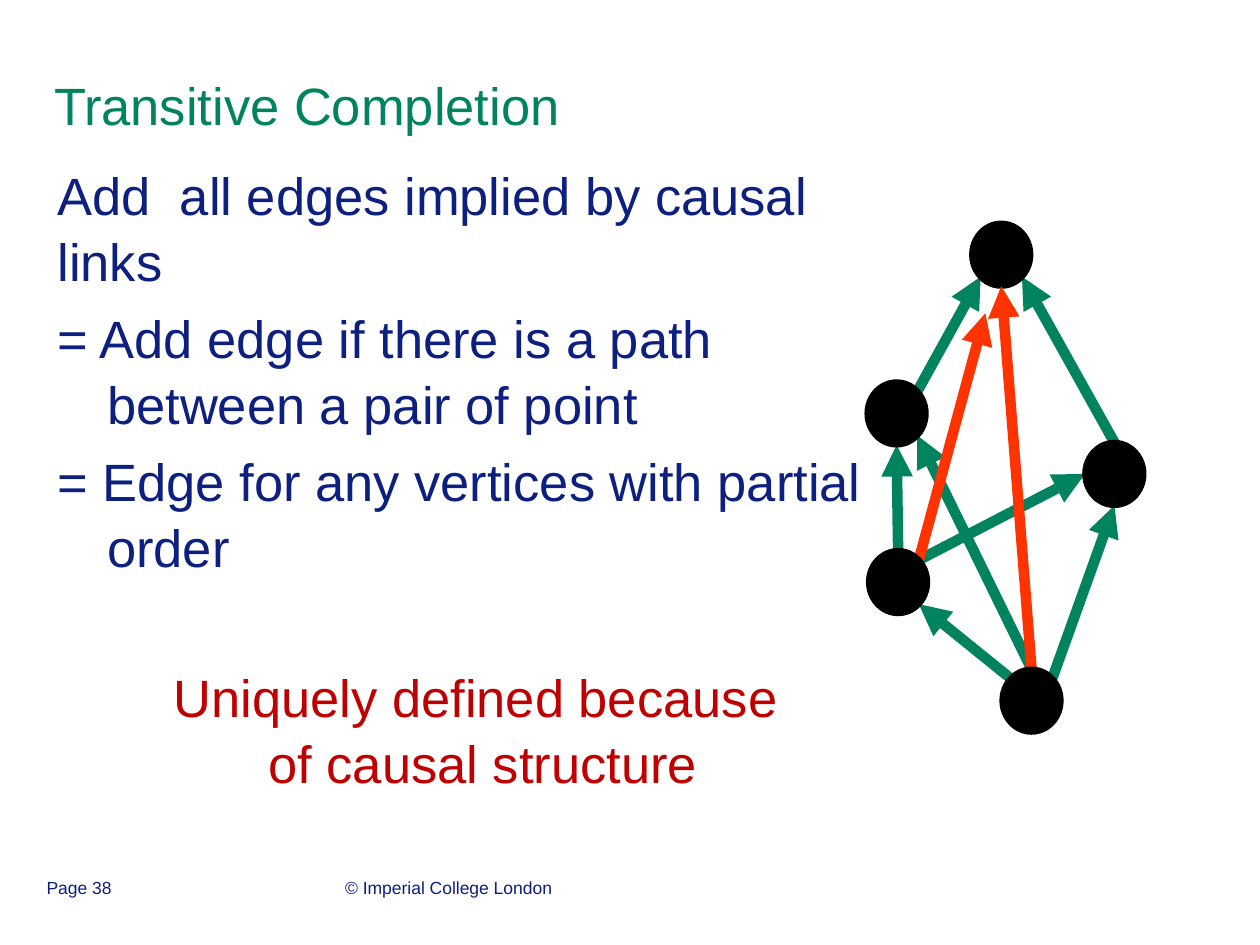
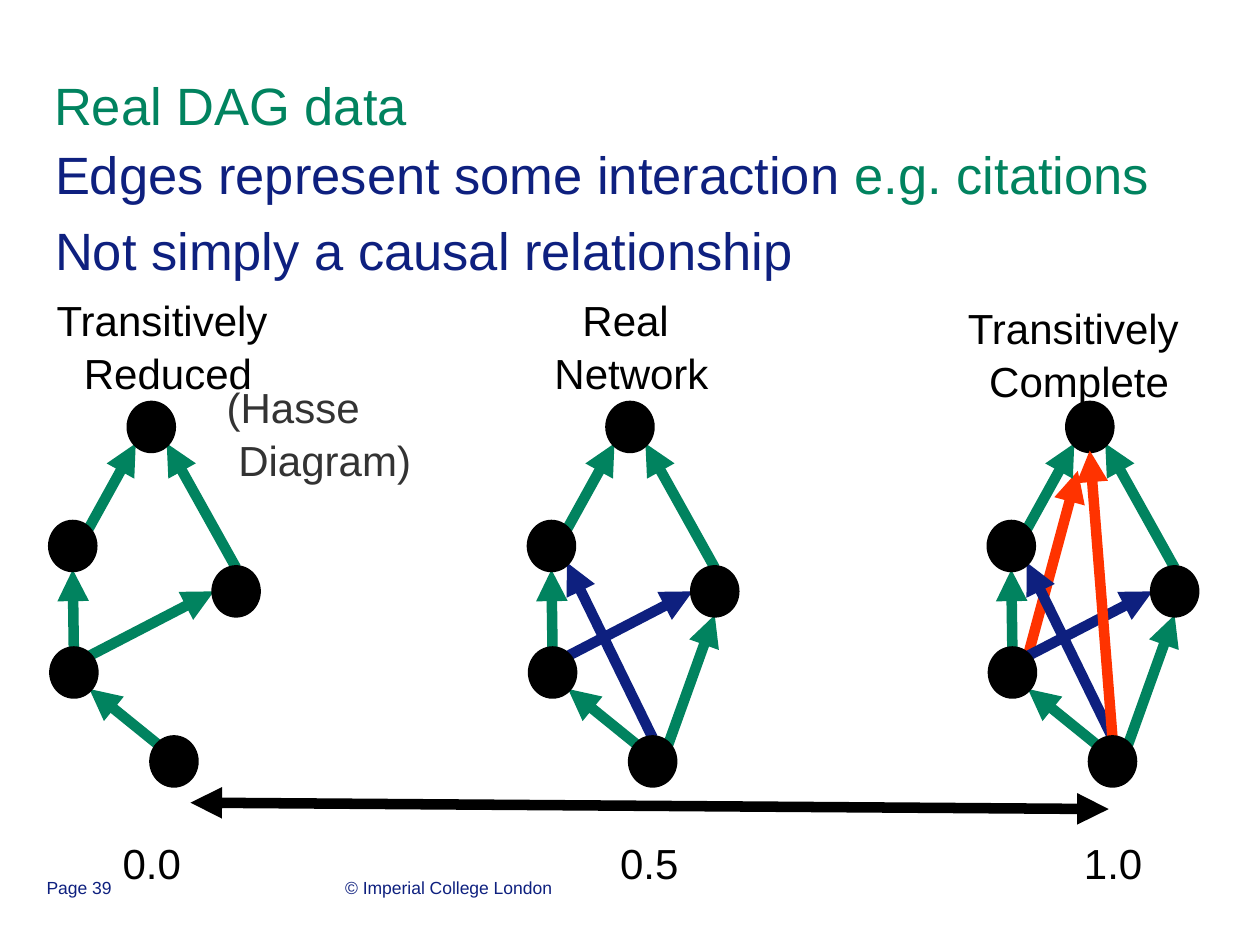
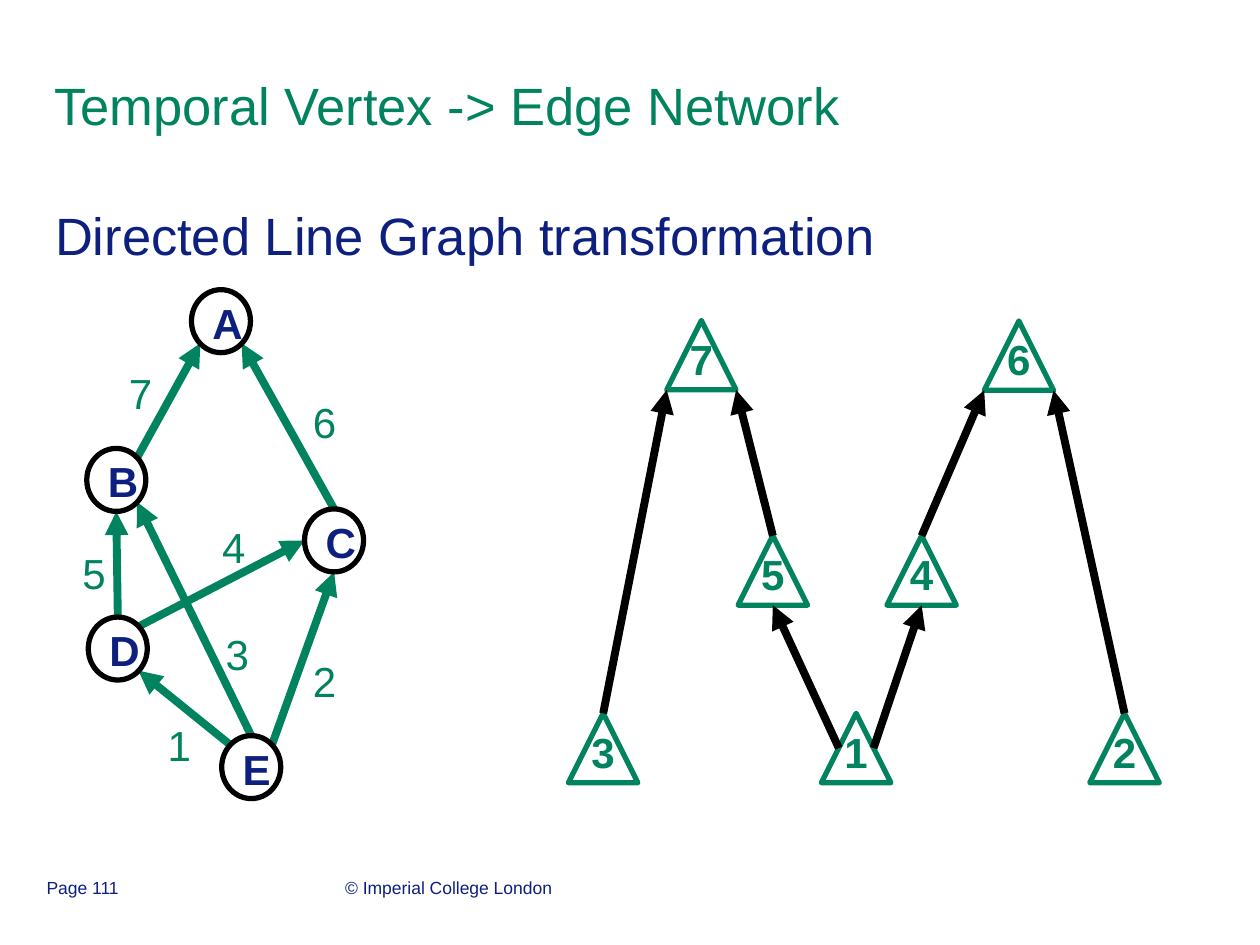
from lxml.etree import SubElement
from pptx import Presentation
from pptx.dml.color import RGBColor
from pptx.enum.shapes import MSO_CONNECTOR, MSO_SHAPE
from pptx.enum.text import MSO_ANCHOR, PP_ALIGN
from pptx.oxml.ns import qn
from pptx.util import Cm, Pt

GREEN, NAVY, RED = "01835F", "0E207F", "C00000"
ORANGE, BLACK, GREY = "FF3300", "000000", "333333"
LEFT, CENTER = PP_ALIGN.LEFT, PP_ALIGN.CENTER
rgb = RGBColor.from_string


def write(sp, paras, size=24, align=LEFT, anchor=MSO_ANCHOR.TOP, wrap=False, bold=False):
    tf = sp.text_frame
    tf.word_wrap = wrap
    tf.vertical_anchor = anchor
    for i, runs in enumerate(paras):
        p = tf.add_paragraph() if i else tf.paragraphs[0]
        p.alignment = align
        p.line_spacing = 1.05
        p.space_before = Pt(size * 0.2 if i else 0)
        for text, color in runs:
            for j, line in enumerate(text.split("\n")):
                if j:
                    p.add_line_break()
                r = p.add_run()
                r.text = line
                r.font.name = "Arial"
                r.font.size = Pt(size)
                r.font.bold = bold
                r.font.color.rgb = rgb(color)
    return tf


def arrow(shapes, start, end, color, width, ends=("a:tailEnd",)):
    cx = shapes.add_connector(MSO_CONNECTOR.STRAIGHT, *map(Cm, start + end))
    cx.line.color.rgb = rgb(color)
    cx.line.width = Pt(width)
    for tag in ends:
        SubElement(cx.line._get_or_add_ln(), qn(tag), type="triangle")
    SubElement(cx._element.spPr, qn("a:effectLst"))


prs = Presentation()
prs.slide_width, prs.slide_height = Cm(25.4), Cm(19.05)

pages = [
    ("Transitive Completion", "Page 38", (0.91, 3.1, 17.65, 14.63), [
        [("Add  all edges implied by causal links", NAVY)],
        [("= Add edge if there is a path between a pair of point", NAVY)],
        [("= Edge for any vertices with partial order", NAVY)],
        [("Uniquely defined because \nof causal structure", RED)],
    ]),
    ("Real DAG data", "Page 39", (0.86, 2.67, 23.27, 3.35), [
        [("Edges represent some interaction ", NAVY), ("e.g. citations", GREEN)],
        [("Not simply a causal relationship", NAVY)],
    ]),
    ("Temporal Vertex -> Edge Network", "Page 111", (0.86, 3.91, 21.54, 1.68), [
        [("Directed Line Graph transformation", NAVY)],
    ]),
]
bodies = []
for title, page, box, paras in pages:
    s = prs.slides.add_slide(prs.slide_layouts[6])
    sp = s.shapes.add_textbox(*map(Cm, (0.84, 0.48, 21.59, 3.18)))
    write(sp, [[(title, GREEN)]], 30, anchor=MSO_ANCHOR.MIDDLE, wrap=True)
    sp = s.shapes.add_textbox(*map(Cm, box))
    bodies.append(write(sp, paras, 30, wrap=True))
    for x, w, text in [(6.71, 8.05, "© Imperial College London"), (0.69, 5.92, page)]:
        sp = s.shapes.add_textbox(*map(Cm, (x, 17.53, w, 1.32)))
        write(sp, [[(text, NAVY)]], 10, wrap=True)
completion, real_data, line_graph = prs.slides

for p in bodies[0].paragraphs[1:3]:
    pPr = p._p.get_or_add_pPr()
    pPr.set("marL", str(Cm(1)))
    pPr.set("indent", str(-Cm(1)))
p = bodies[0].paragraphs[3]
p.alignment = CENTER
p.space_before = Pt(48)

vertices = {"A": (2.11, 0), "B": (0, 3.2), "C": (4.39, 4.42), "D": (0.03, 6.6), "E": (2.72, 8.99)}
sites = {
    "top": (0.5, 0), "bottom": (0.5, 1), "left": (0, 0.5),
    "nw": (0.15, 0.15), "ne": (0.85, 0.15), "sw": (0.15, 0.85), "se": (0.85, 0.85),
    "below": (0.23, 1.43),
}
edges = {
    "BA": ("ne", "sw"), "DB": ("top", "bottom"), "ED": ("nw", "se"), "EC": ("ne", "bottom"),
    "CA": ("top", "se"), "DC": ("ne", "left"), "EB": ("top", "se"),
    "EA": ("top", "bottom"), "DA": ("ne", "below"),
}
graphs = [
    (completion, 17.48, 4.5, 1, 6, "", "EB BA DB ED EC CA DC A C B EA DA D E"),
    (real_data, 10.67, 8.13, 0.75, 6, "EB DC", "EB BA DB ED EC CA DC A C D B E"),
    (real_data, 1.02, 8.13, 0.75, 6, "", "BA DB ED CA DC A C D B E"),
    (real_data, 19.94, 8.13, 0.75, 6, "EB DC", "DA EB BA DB ED EC CA DC A C B EA D E"),
    (line_graph, 1.75, 5.84, 1, 4.5, "", "BA DB ED EC CA DC EB A C D B E"),
]
for s, left, top, scale, width, navy_edges, order in graphs:
    shapes = s.shapes.add_group_shape().shapes
    for name in order.split():
        if name in edges:
            ends = []
            for vertex, site in zip(name, edges[name]):
                (vx, vy), (fx, fy) = vertices[vertex], sites[site]
                ends.append((left + scale * (vx + 1.19 * fx), top + scale * (vy + 1.27 * fy)))
            color = ORANGE if name in ("EA", "DA") else NAVY if name in navy_edges.split() else GREEN
            arrow(shapes, *ends, color, width)
            continue
        vx, vy = vertices[name]
        box = (left + scale * vx, top + scale * vy, scale * 1.19, scale * 1.27)
        sp = shapes.add_shape(MSO_SHAPE.OVAL, *map(Cm, box))
        sp.shadow.inherit = False
        sp.line.color.rgb = rgb(BLACK)
        sp.line.width = Pt(3)
        if s is line_graph:
            sp.fill.background()
            write(sp, [[(name, NAVY)]], anchor=MSO_ANCHOR.MIDDLE, bold=True)
        else:
            sp.fill.solid()
            sp.fill.fore_color.rgb = rgb(BLACK)

s = real_data
arrow(s.shapes, (3.84, 16.18), (22.35, 16.31), BLACK, 6, ("a:headEnd", "a:tailEnd"))
captions = [
    (0.86, 5.77, 5.05, 2.31, "Transitively \nReduced", BLACK, CENTER),
    (10.9, 5.77, 3.66, 2.31, "Real \nNetwork", BLACK, CENTER),
    (19.23, 5.92, 5.05, 2.31, "Transitively \nComplete", BLACK, CENTER),
    (2.21, 16.71, 1.7, 1.27, "0.0", BLACK, CENTER),
    (12.24, 16.71, 1.7, 1.27, "0.5", BLACK, CENTER),
    (21.59, 16.71, 1.7, 1.27, "1.0", BLACK, CENTER),
    (4.32, 7.52, 4.27, 2.31, "(Hasse\n Diagram)", GREY, LEFT),
]
for x, y, w, h, text, color, align in captions:
    sp = s.shapes.add_textbox(*map(Cm, (x, y, w, h)))
    write(sp, [[(text, color)]], align=align)

s = line_graph
edge_labels = [(3.12, 14.33), (6.05, 13.03), (4.29, 12.5), (4.22, 10.34),
               (1.4, 10.87), (6.05, 7.82), (2.34, 7.24)]
triangles = [(16.56, 14.38), (21.97, 14.38), (11.46, 14.38), (17.88, 10.8),
             (14.88, 10.8), (19.84, 6.47), (13.44, 6.46)]
side = 1.4
for i, (label, corner) in enumerate(zip(edge_labels, triangles), 1):
    sp = s.shapes.add_textbox(*map(Cm, label + (0.99, 1.27)))
    write(sp, [[(str(i), GREEN)]], align=CENTER)
    sp = s.shapes.add_shape(MSO_SHAPE.ISOSCELES_TRIANGLE, *map(Cm, corner + (side, side)))
    sp.shadow.inherit = False
    sp.fill.background()
    sp.line.color.rgb = rgb(GREEN)
    sp.line.width = Pt(3)
    write(sp, [[(str(i), GREEN)]], align=CENTER, anchor=MSO_ANCHOR.BOTTOM, bold=True)

links = [
    (1, 0.25, 0.5, 5, 0.5), (1, 0.75, 0.5, 4, 0.5), (5, 0.5, 0, 7, 1),
    (3, 0.5, 0, 7, 0), (2, 0.5, 0, 6, 1), (4, 0.5, 0, 6, 0),
]
for a, ax, ay, b, bx in links:
    (x1, y1), (x2, y2) = triangles[a - 1], triangles[b - 1]
    arrow(s.shapes, (x1 + side * ax, y1 + side * ay), (x2 + side * bx, y2 + side), BLACK, 4.5)

prs.save("out.pptx")
